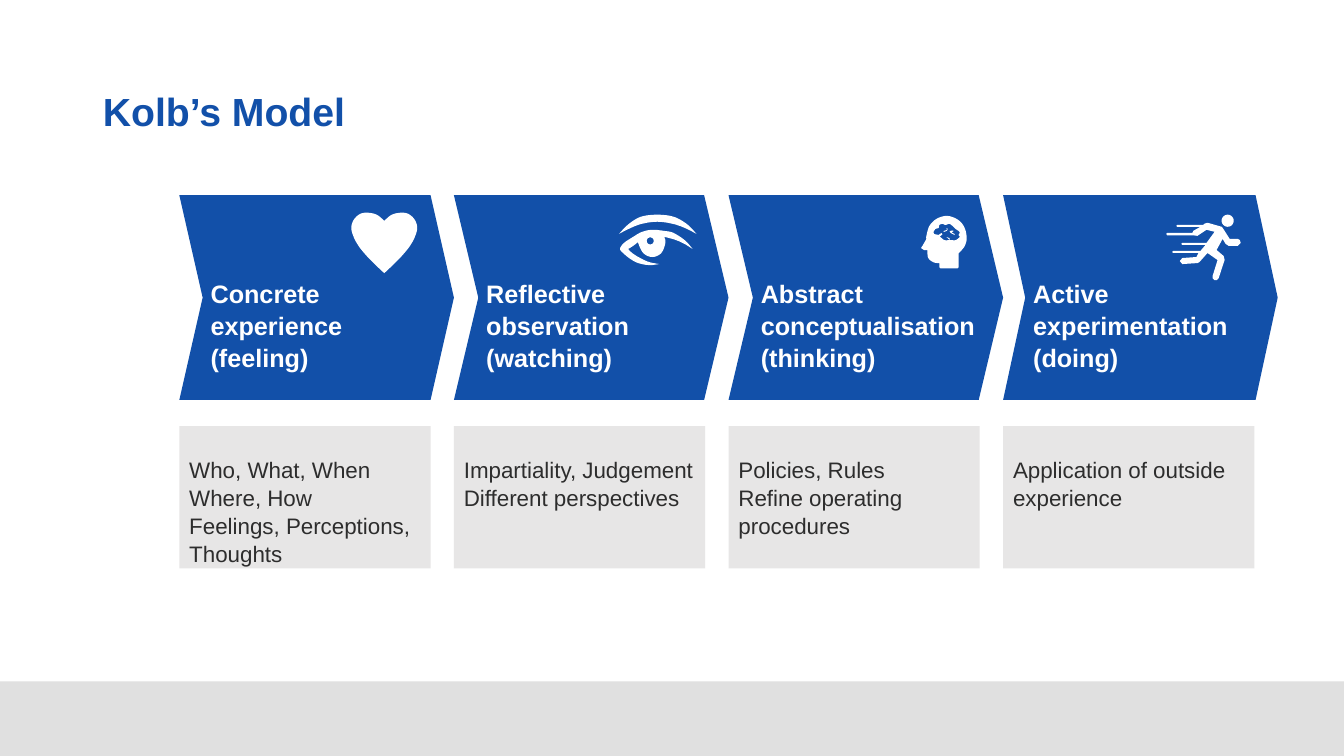
from math import cos, pi, sin

from pptx import Presentation
from pptx.dml.color import RGBColor
from pptx.enum.shapes import MSO_SHAPE
from pptx.enum.text import MSO_ANCHOR, PP_ALIGN
from pptx.util import Cm, Pt

BLUE = RGBColor(0x12, 0x50, 0xA9)
WHITE = RGBColor(0xFF, 0xFF, 0xFF)
INK = RGBColor(0x2D, 0x2D, 0x2D)
BOX_GREY = RGBColor(0xE7, 0xE6, 0xE6)
FOOTER_GREY = RGBColor(0xE0, 0xE0, 0xE0)

TITLE_FONT = {"name": "Arial", "size": Pt(28), "bold": True}
STAGE_FONT = {"name": "Arial", "size": Pt(18), "bold": True}
DETAIL_FONT = {"name": "Arial", "size": Pt(16), "bold": False}

STAGE_FRAME = {
    "word_wrap": True, "vertical_anchor": MSO_ANCHOR.MIDDLE,
    "margin_left": Cm(0.2), "margin_top": Cm(1.5),
    "margin_right": Cm(0), "margin_bottom": Cm(0.13),
}
DETAIL_FRAME = {
    "word_wrap": True, "vertical_anchor": MSO_ANCHOR.TOP,
    "margin_left": Cm(0.25), "margin_top": Cm(0.71),
    "margin_right": Cm(0.25), "margin_bottom": Cm(0.13),
}

FIRST_LEFT, PITCH = 4.52, 6.92
STEPS_PER_CURVE = 6
ICON_UNIT = Cm(2.54) / 1000

# Stage lines, detail lines, depth of the chevron's point
STAGES = [
    (["Concrete experience", "(feeling)"],
     ["Who, What, When Where, How", "Feelings, Perceptions, Thoughts"], 0.114),
    (["Reflective observation", "(watching)"],
     ["Impartiality, Judgement", "Different perspectives"], 0.119),
    (["Abstract conceptualisation", "(thinking)"],
     ["Policies, Rules", "Refine operating procedures"], 0.119),
    (["Active experimentation", "(doing)"],
     ["Application of outside experience"], 0.108),
]


def smooth(points):
    """Return points on a Catmull-Rom curve that passes through the given points."""
    padded = [points[0], *points, points[-1]]
    curve = [points[0]]
    for a, b, c, d in zip(padded, padded[1:], padded[2:], padded[3:]):
        for step in range(1, STEPS_PER_CURVE + 1):
            t = step / STEPS_PER_CURVE
            curve.append(tuple(
                (2 * q + (r - p) * t + (2 * p - 5 * q + 4 * r - s) * t ** 2
                 + (3 * q - p - 3 * r + s) * t ** 3) / 2
                for p, q, r, s in zip(a, b, c, d)))
    return curve


def outline(*strokes):
    """Chain smoothed strokes into one contour, with corners where they meet."""
    return [point for stroke in strokes for point in smooth(stroke)]


def circle(x, y, radius, count=32):
    return [(x + radius * cos(2 * pi * i / count), y + radius * sin(2 * pi * i / count))
            for i in range(count)]


HEART_HALF = [(32.5, 60), (18, 46), (7, 33), (1, 21), (0, 13), (3, 6), (9, 1),
              (16, 0), (25, 2), (32.5, 8)]
HEART = [outline(HEART_HALF, [(65 - x, y) for x, y in reversed(HEART_HALF)])]

EYELID = [outline(
    [(0, 19), (10, 9), (22, 2), (38, 0), (54, 2), (67, 9), (77, 19)],
    [(77, 19), (65, 13), (53, 9), (38, 7), (23, 9), (12, 13), (0, 19)],
)]
EYE = [
    outline(
        [(1, 33), (5, 28), (14, 22), (23, 17), (33, 15), (44, 16), (54, 18),
         (66, 26), (73, 34)],
        [(73, 34), (65, 29), (56, 25), (45, 22)],
        [(45, 22), (46, 28), (42, 38), (33, 42), (24, 38), (19, 28), (19, 27)],
        [(19, 27), (14, 31), (9, 34)],
        [(9, 34), (13, 38), (21, 43), (30, 47), (40, 49)],
        [(40, 49), (30, 50), (19, 48), (10, 43), (2, 36), (1, 33)],
    ),
    circle(31, 26, 3.5),
]
HEAD = [
    outline(
        [(5, 23), (5, 20), (8, 10), (15, 3), (25, 0), (35, 3), (42, 10), (45, 21),
         (43, 30), (37, 37)],
        [(37, 51), (36, 52)],
        [(19, 52), (18, 51)],
        [(18, 47), (12, 46), (7, 42), (6, 36), (6, 34)],
        [(3, 34), (0, 32), (1, 30)],
    ),
    outline([(12, 16), (14, 13), (17, 12), (18, 9), (21, 8), (24, 9), (28, 8), (32, 11),
             (34, 13), (38, 16), (37, 19), (38, 21), (34, 24), (29, 24), (23, 24),
             (19, 21), (17, 19), (13, 18), (12, 16)]),
    [(28, 15), (29, 17), (33, 19), (33, 18), (30, 16.5), (32, 15), (31, 14.5)],
    [(17, 19), (20, 17), (21, 18), (19, 20)],
    [(25, 21), (28, 22), (28, 24), (26, 22)],
]
BRAIN_FOLD = [outline([(25, 12), (25, 14), (22, 15)],
                      [(22, 16), (25, 15), (26, 13), (25, 12)])]
RUNNER = [
    circle(61, 6, 6),
    [(71, 24), (63, 24), (56, 13), (55, 12), (41, 8), (38, 9), (37, 10), (11, 10),
     (10, 11), (11, 12), (34, 12), (27, 16), (26, 18), (1, 18), (0, 19), (1, 20.5),
     (27, 20.5), (31, 21), (40, 15), (48, 17), (40, 28), (16, 28), (15, 29), (16, 30),
     (39, 30), (34, 36), (7, 36), (6, 37), (7, 38), (32, 38), (30, 42), (16, 43),
     (13.5, 46), (16, 49), (31, 48), (33, 47), (41, 38), (51, 45), (46, 61), (46, 63),
     (48, 65), (50, 65), (52, 63), (58, 45), (57, 41), (50, 35), (56, 24), (59, 29),
     (62, 31), (71, 31), (74, 28), (73, 25)],
]
ICONS = [
    (HEART, 8.86, 5.36), (EYELID, 15.6, 5.41), (EYE, 15.6, 5.41),
    (HEAD, 23.22, 5.44), (BRAIN_FOLD, 23.22, 5.44), (RUNNER, 29.39, 5.41),
]


class SlideBuilder:
    def __init__(self, presentation):
        self.slide = presentation.slides.add_slide(presentation.slide_layouts[5])
        self.shapes = self.slide.shapes

    def paint(self, shape, color):
        shape.shadow.inherit = False
        shape.fill.solid()
        shape.fill.fore_color.rgb = color
        shape.line.fill.background()

    def set_text(self, shape, lines, frame_format, font_format, color, spacing):
        frame = shape.text_frame
        for name, value in frame_format.items():
            setattr(frame, name, value)
        frame.text = "\n".join(lines)
        for paragraph in frame.paragraphs:
            paragraph.alignment = PP_ALIGN.LEFT
            paragraph.line_spacing = spacing
            for name, value in font_format.items():
                setattr(paragraph.font, name, value)
            paragraph.font.color.rgb = color

    def title(self, text, left, top, width, height):
        title = self.shapes.title
        title.left, title.top = Cm(left), Cm(top)
        title.width, title.height = Cm(width), Cm(height)
        self.set_text(title, [text], {"vertical_anchor": MSO_ANCHOR.MIDDLE},
                      TITLE_FONT, BLUE, 0.9)

    def block(self, kind, left, top, width, height, color):
        shape = self.shapes.add_shape(kind, Cm(left), Cm(top), Cm(width), Cm(height))
        self.paint(shape, color)
        return shape

    def chevron(self, left, top, width, height, depth, color):
        shape = self.block(MSO_SHAPE.CHEVRON, left, top, width, height, color)
        shape.adjustments[0] = depth
        return shape

    def icon(self, contours, left, top):
        """Draw closed contours, given in hundredths of an inch, as one white shape."""
        scaled = [[(x * 10, y * 10) for x, y in contour] for contour in contours]
        builder = self.shapes.build_freeform(*scaled[0][0], scale=ICON_UNIT)
        builder.add_line_segments(scaled[0][1:], close=True)
        for contour in scaled[1:]:
            builder.move_to(*contour[0])
            builder.add_line_segments(contour[1:], close=True)
        self.paint(builder.convert_to_shape(Cm(left), Cm(top)), WHITE)


def main():
    presentation = Presentation()
    presentation.slide_width, presentation.slide_height = Cm(33.87), Cm(19.05)
    builder = SlideBuilder(presentation)
    builder.block(MSO_SHAPE.RECTANGLE, 0, 17.17, 33.87, 1.88, FOOTER_GREY)
    builder.title("Kolb’s Model", 2.34, 1.02, 29.21, 3.68)
    for index, (stage, details, depth) in enumerate(STAGES):
        left = FIRST_LEFT + index * PITCH
        box = builder.chevron(left, 10.74, 6.33, 3.58, 0, BOX_GREY)
        builder.set_text(box, details, DETAIL_FRAME, DETAIL_FONT, INK, 1.05)
        arrow = builder.chevron(left, 4.92, PITCH, 5.16, depth, BLUE)
        builder.set_text(arrow, stage, STAGE_FRAME, STAGE_FONT, WHITE, 1.05)
    for contours, left, top in ICONS:
        builder.icon(contours, left, top)
    presentation.save("out.pptx")


if __name__ == "__main__":
    main()
